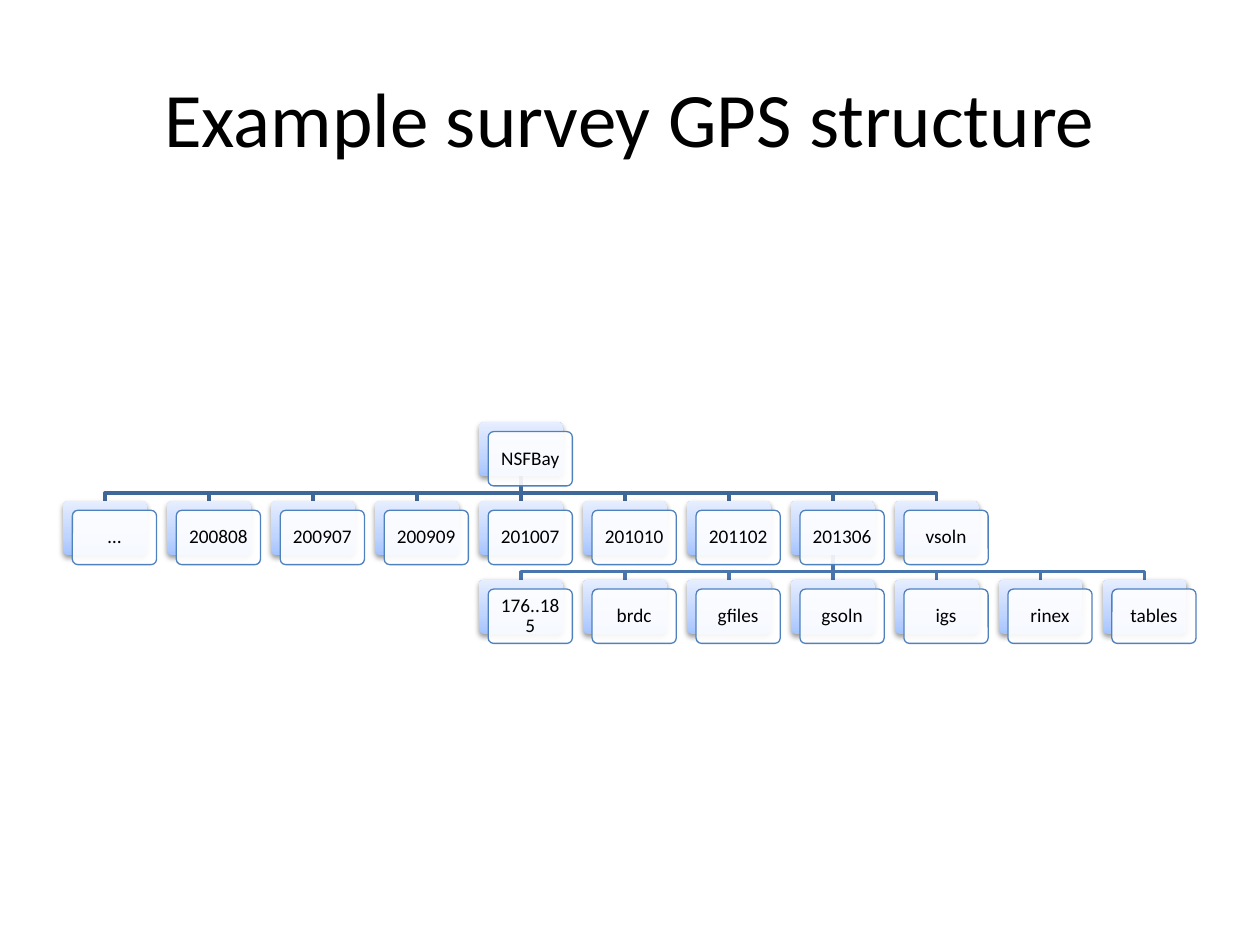
"""Build a slide with the folder tree of a GPS survey."""
import dataclasses
import typing

import pptx
import pptx.dml.color
import pptx.enum.shapes
import pptx.enum.text
import pptx.oxml
import pptx.oxml.ns
import pptx.util


@dataclasses.dataclass(frozen=True)
class Theme:
    font: str = "Calibri"
    ink: str = "000000"
    face: str = "FFFFFF"
    edge: str = "4F81BD"
    shade: tuple = ((0, "A4C4FF"), (35, "BFD4FF"), (100, "E6EEFF"))
    head: int = 44
    label: int = 11
    rule: float = 0.75
    link: int = 2


@dataclasses.dataclass(frozen=True)
class Grid:
    left: float = 0.5
    top: float = 3.35
    wide: float = 8.25 / 10
    high: float = 1.25 / 2

    def spot(self, col: float, row: float) -> tuple:
        return (pptx.util.Inches(self.left + col * self.wide),
                pptx.util.Inches(self.top + row * self.high))

    def size(self, cols: float, rows: float) -> tuple:
        return pptx.util.Inches(cols * self.wide), pptx.util.Inches(rows * self.high)


class Level(typing.NamedTuple):
    row: int
    start: int
    names: tuple
    stem: int = 0
    tint: str = ""


THEME = Theme()
GRID = Grid()
CARD = (0.81, 0.69)
SHIFT = (0.09, 0.12)
BEND = 0.9
LEVELS = (
    Level(0, 4, ("NSFBay",)),
    Level(1, 0, ("…", "200808", "200907", "200909", "201007", "201010",
                 "201102", "201306", "vsoln"), 4, "3F6797"),
    Level(2, 4, ("176..185", "brdc", "gfiles", "gsoln", "igs", "rinex",
                 "tables"), 7, "4875AC"),
)


def tone(code: str) -> pptx.dml.color.RGBColor:
    return pptx.dml.color.RGBColor.from_string(code)


def node(tag: str) -> typing.Any:
    return pptx.oxml.parse_xml(tag.replace(
        ">", f" {pptx.oxml.ns.nsdecls('a')}>", 1))


def write(frame: typing.Any, text: str, size: int, inset: float) -> typing.Any:
    frame.word_wrap = True
    frame.vertical_anchor = pptx.enum.text.MSO_ANCHOR.MIDDLE
    frame.margin_left = frame.margin_right = pptx.util.Inches(inset)
    frame.margin_top = frame.margin_bottom = pptx.util.Inches(0.05)
    para = frame.paragraphs[0]
    para.alignment = pptx.enum.text.PP_ALIGN.CENTER
    run = para.add_run()
    run.text = text
    run.font.name = THEME.font
    run.font.size = pptx.util.Pt(size)
    run.font.color.rgb = tone(THEME.ink)
    return para


def add_link(shapes: typing.Any, level: Level, col: int) -> None:
    mid = CARD[0] / 2
    stem, leaf = level.stem + mid, col + mid
    base = level.row - 1
    start, end = GRID.spot(stem, base + CARD[1]), GRID.spot(leaf, level.row)
    if col == level.stem:
        kind = pptx.enum.shapes.MSO_CONNECTOR.STRAIGHT
        link = shapes.add_connector(kind, *start, *end)
        link._element.spPr.append(node("<a:effectLst></a:effectLst>"))
    else:
        pen = shapes.build_freeform(*start)
        turns = [GRID.spot(spot, base + BEND) for spot in (stem, leaf)]
        pen.add_line_segments([*turns, end], close=False)
        link = pen.convert_to_shape()
        link.fill.background()
        link.shadow.inherit = False
    link.line.color.rgb = tone(level.tint)
    link.line.width = pptx.util.Pt(THEME.link)


def add_plate(shapes: typing.Any, col: float, row: float) -> typing.Any:
    kind = pptx.enum.shapes.MSO_SHAPE.ROUNDED_RECTANGLE
    plate = shapes.add_shape(kind, *GRID.spot(col, row), *GRID.size(*CARD))
    plate.adjustments[0] = 0.1
    plate.shadow.inherit = False
    return plate


def add_back(shapes: typing.Any, col: int, row: int) -> None:
    back = add_plate(shapes, col, row)
    back.line.fill.background()
    back.fill.background()
    props = back._element.spPr
    stops = "".join(f'<a:gs pos="{part * 1000}"><a:srgbClr val="{code}"/></a:gs>'
                    for part, code in THEME.shade)
    blend = node(f'<a:gradFill rotWithShape="1"><a:gsLst>{stops}</a:gsLst>'
                 '<a:lin ang="16200000" scaled="0"/></a:gradFill>')
    props.replace(props.find(pptx.oxml.ns.qn("a:noFill")), blend)
    blur, drop = pptx.util.Pt(3.1), pptx.util.Pt(1.6)
    props.find(pptx.oxml.ns.qn("a:effectLst")).append(node(
        f'<a:outerShdw blurRad="{blur}" dist="{drop}" dir="5400000" '
        f'rotWithShape="0"><a:srgbClr val="{THEME.ink}">'
        '<a:alpha val="38000"/></a:srgbClr></a:outerShdw>'))


def add_card(shapes: typing.Any, text: str, col: int, row: int) -> None:
    add_back(shapes, col, row)
    card = add_plate(shapes, col + SHIFT[0], row + SHIFT[1])
    card.fill.solid()
    card.fill.fore_color.rgb = tone(THEME.face)
    paint = card._element.spPr.find(".//" + pptx.oxml.ns.qn("a:srgbClr"))
    paint.append(node('<a:alpha val="90000"></a:alpha>'))
    card.line.color.rgb = tone(THEME.edge)
    card.line.width = pptx.util.Pt(THEME.rule)
    write(card.text_frame, text, THEME.label, 0.05).line_spacing = 0.9


def main() -> None:
    deck = pptx.Presentation()
    deck.slide_width, deck.slide_height = pptx.util.Inches(10), pptx.util.Inches(7.5)
    shapes = deck.slides.add_slide(deck.slide_layouts[6]).shapes
    wide, high = deck.slide_width, deck.slide_height
    title = shapes.add_textbox(int(wide * 0.05), int(high * 0.04),
                               int(wide * 0.9), pptx.util.Inches(1.25))
    write(title.text_frame, "Example survey GPS structure", THEME.head, 0.1)
    for level in LEVELS[1:]:
        for col in range(level.start, level.start + len(level.names)):
            add_link(shapes, level, col)
    for level in LEVELS:
        for col, name in enumerate(level.names, level.start):
            add_card(shapes, name, col, level.row)
    deck.save("out.pptx")


if __name__ == "__main__":
    main()
